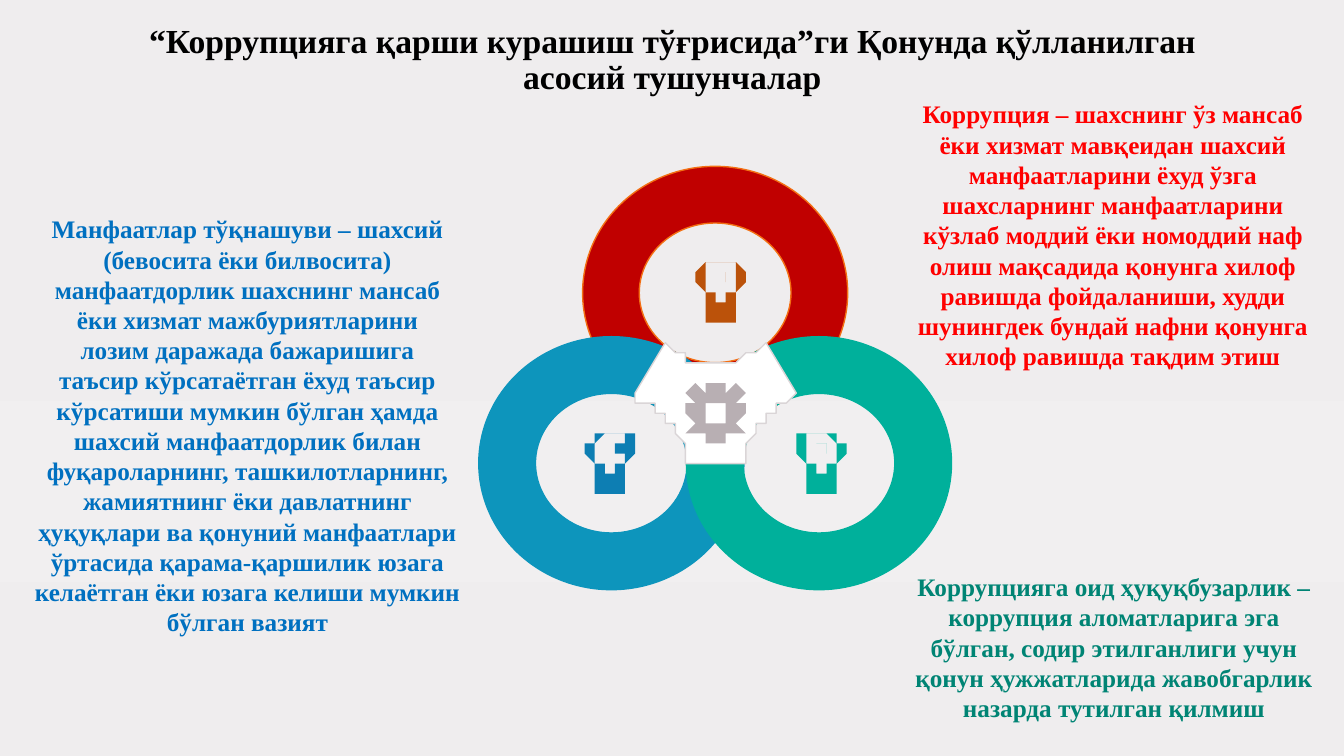
"""Build the slide on the key concepts of the anti-corruption law."""
from dataclasses import dataclass
from math import cos, radians, sin

from lxml import etree
from pptx import Presentation
from pptx import util as u
from pptx.dml.color import RGBColor
from pptx.enum import shapes, text
from pptx.oxml.ns import qn

CELL = u.Inches(0.1)
COLS, ROWS = 133.33, 75
FONT = "Times New Roman"

BLACK = RGBColor(0x00, 0x00, 0x00)
WHITE = RGBColor(0xFF, 0xFF, 0xFF)
CRIMSON = RGBColor(0xC0, 0x00, 0x00)
ORANGE = RGBColor(0xF3, 0x6F, 0x13)
BROWN = RGBColor(0xBB, 0x52, 0x0A)
CYAN = RGBColor(0x0D, 0x95, 0xBC)
BLUE = RGBColor(0x0D, 0x7E, 0xB3)
GREEN = RGBColor(0x00, 0xB0, 0x9B)
GRAY = RGBColor(0xB8, 0xAF, 0xB3)
PALE = RGBColor(0xDA, 0xD5, 0xD7)
RED_TEXT = RGBColor(0xFF, 0x00, 0x00)
GREEN_TEXT = RGBColor(0x00, 0x84, 0x74)
BLUE_TEXT = RGBColor(0x00, 0x70, 0xC0)
BACKDROP = {0: "EFEDEE", 53: "F1EFF0", 77: "EFEDEE", 100: "EFEBEC"}

Points = list[tuple[float, float]]


@dataclass
class Ring:
    col: float
    row: float
    fill: RGBColor
    line: RGBColor


@dataclass
class Bulb:
    col: float
    row: float
    fill: RGBColor


@dataclass
class Note:
    col: float
    row: float
    cols: float
    rows: float
    color: RGBColor
    paragraphs: list[str]
    size: int = 18
    spacing: float = 1.0


RING_COLS, RING_ROWS, RING_BAND = 26.3, 25.1, 0.224
HOLE_RX, HOLE_RY = 7.28, 6.95
RINGS = [
    Ring(57.8, 16.5, CRIMSON, ORANGE),
    Ring(47.5, 33.4, CYAN, CYAN),
    Ring(68.1, 33.4, GREEN, GREEN),
]
BULBS = [
    Bulb(81.4, 42.6, GREEN),
    Bulb(60.6, 42.6, BLUE),
    Bulb(71.5, 25.6, BROWN),
]
NOTES = [
    Note(89.2, 9.3, 42.4, 28.3, RED_TEXT, [
        "Коррупция – шахснинг ўз мансаб ёки хизмат мавқеидан шахсий манфаатларини "
        "ёхуд ўзга шахсларнинг манфаатларини кўзлаб моддий ёки номоддий наф олиш "
        "мақсадида қонунга хилоф равишда фойдаланиши, худди шунингдек бундай нафни "
        "қонунга хилоф равишда тақдим этиш"]),
    Note(89.4, 56.2, 42.2, 16.2, GREEN_TEXT, [
        "Коррупцияга оид ҳуқуқбузарлик – коррупция аломатларига эга бўлган, содир "
        "этилганлиги учун қонун ҳужжатларида жавобгарлик назарда тутилган қилмиш"]),
    Note(1.9, 20.7, 45.3, 46.4, BLUE_TEXT, [
        "Манфаатлар тўқнашуви – шахсий\v(бевосита ёки билвосита)\v"
        "манфаатдорлик шахснинг мансаб\vёки хизмат мажбуриятларини\v"
        "лозим даражада бажаришига\vтаъсир кўрсатаётган ёхуд таъсир\v"
        "кўрсатиши мумкин бўлган ҳамда",
        "шахсий манфаатдорлик билан фуқароларнинг, ташкилотларнинг, жамиятнинг ёки "
        "давлатнинг ҳуқуқлари ва қонуний манфаатлари ўртасида қарама-қаршилик юзага "
        "келаётган ёки юзага келиши мумкин бўлган вазият"]),
    Note(9.2, 1.9, 115, 8.1, BLACK, [
        "“Коррупцияга қарши курашиш тўғрисида”ги Қонунда қўлланилган асосий "
        "тушунчалар"], 24, 0.9),
]


def arc(cx: float, cy: float, rx: float, ry: float, start: float, end: float) -> Points:
    steps = 24
    angles = [radians(start + (end - start) * i / steps) for i in range(steps + 1)]
    return [(cx + rx * cos(a), cy + ry * sin(a)) for a in angles]


def mirrored(half: Points) -> Points:
    return half + [(-x, y) for x, y in reversed(half)]


def moved(points: Points, col: float, row: float) -> Points:
    return [(x + col, y + row) for x, y in points]


def paint(sp, fill: RGBColor, line: RGBColor | None) -> None:
    sp.shadow.inherit = False
    sp.fill.solid()
    sp.fill.fore_color.rgb = fill
    if line is None:
        sp.line.fill.background()
    else:
        sp.line.color.rgb = line
        sp.line.width = u.Pt(1)


def draw_outline(s, contours: list[Points], fill: RGBColor, line: RGBColor | None = None) -> None:
    fb = s.shapes.build_freeform(*contours[0][0], scale=CELL)
    for i, contour in enumerate(contours):
        if i:
            fb.move_to(*contour[0])
        fb.add_line_segments(contour[1:], close=True)
    paint(fb.convert_to_shape(), fill, line)


def draw_ring(s, ring: Ring) -> None:
    box = [round(v * CELL) for v in (ring.col, ring.row, RING_COLS, RING_ROWS)]
    sp = s.shapes.add_shape(shapes.MSO_SHAPE.DONUT, *box)
    sp.adjustments[0] = RING_BAND
    paint(sp, ring.fill, ring.line)


def draw_hub(s) -> None:
    top, left, right = [(r.col + RING_COLS / 2, r.row + RING_ROWS / 2) for r in RINGS]
    hole = (HOLE_RX, HOLE_RY)
    edge = [(66.2, 34.3), *arc(*top, *hole, 125, 55), (75.8, 34.3), (78.9, 39.4),
            *arc(*right, *hole, 247, 180), *arc(*left, *hole, 0, -67), (63, 39.4)]
    draw_outline(s, [edge], WHITE, PALE)


def draw_gear(s) -> None:
    cx, cy, squeeze = 71, 40.8, 0.95
    profile = [(-17.5, 2.5), (-10, 3.35), (10, 3.35), (17.5, 2.5)]
    teeth = [(cx + r * cos(radians(k * 45 + a)), cy + squeeze * r * sin(radians(k * 45 + a)))
             for k in range(8) for a, r in profile]
    draw_outline(s, [teeth, arc(cx, cy, 1.1, 1.05, 360, 0)], GRAY)


def draw_bulb(s, bulb: Bulb) -> None:
    glass = arc(0, 2, 2.37, 2, -90, 20)
    base = [(1.9, 3.1), (1.5, 3.5), (1.25, 3.9), (1.12, 4.4), (1.3, 4.75), (1.23, 5.03),
            (1.3, 5.3), (1.12, 5.7), (1.17, 5.95), (1, 6.2), (0.7, 6.3), (0.4, 6.63), (0, 6.75)]
    cavity = arc(0, 2, 1.8, 1.45, -90, 20) + [(1.5, 2.7), (1.2, 3), (0.75, 3.65), (0.52, 4.3)]
    glint = arc(0, 2.05, 1, 0.8, -90, 0) + arc(0, 2.05, 0.7, 0.55, 0, -90)
    contours = [mirrored(glass + base), mirrored(cavity)[::-1], glint]
    draw_outline(s, [moved(c, bulb.col, bulb.row) for c in contours], bulb.fill)


def draw_note(s, note: Note) -> None:
    box = [round(v * CELL) for v in (note.col, note.row, note.cols, note.rows)]
    tf = s.shapes.add_textbox(*box).text_frame
    tf.word_wrap = True
    style = {"name": FONT, "size": u.Pt(note.size), "bold": True}
    for i, words in enumerate(note.paragraphs):
        p = tf.paragraphs[0] if i == 0 else tf.add_paragraph()
        p.text = words
        p.alignment = text.PP_ALIGN.CENTER
        p.line_spacing = note.spacing
        for r in p.runs:
            for key, value in style.items():
                setattr(r.font, key, value)
            r.font.color.rgb = note.color


def draw_backdrop(s) -> None:
    fill = s.background.fill
    fill.gradient()
    fill.gradient_angle = 270
    stops = s.element.find(".//" + qn("a:gsLst"))
    for stop in list(stops):
        stops.remove(stop)
    for share, color in BACKDROP.items():
        stop = etree.SubElement(stops, qn("a:gs"), pos=str(share * 1000))
        etree.SubElement(stop, qn("a:srgbClr"), val=color)


def main() -> None:
    prs = Presentation()
    prs.slide_width, prs.slide_height = round(COLS * CELL), ROWS * CELL
    s = prs.slides.add_slide(prs.slide_layouts[6])
    draw_backdrop(s)
    for ring in RINGS:
        draw_ring(s, ring)
    draw_hub(s)
    draw_gear(s)
    for bulb in BULBS:
        draw_bulb(s, bulb)
    for note in NOTES:
        draw_note(s, note)
    prs.save("out.pptx")


if __name__ == "__main__":
    main()
